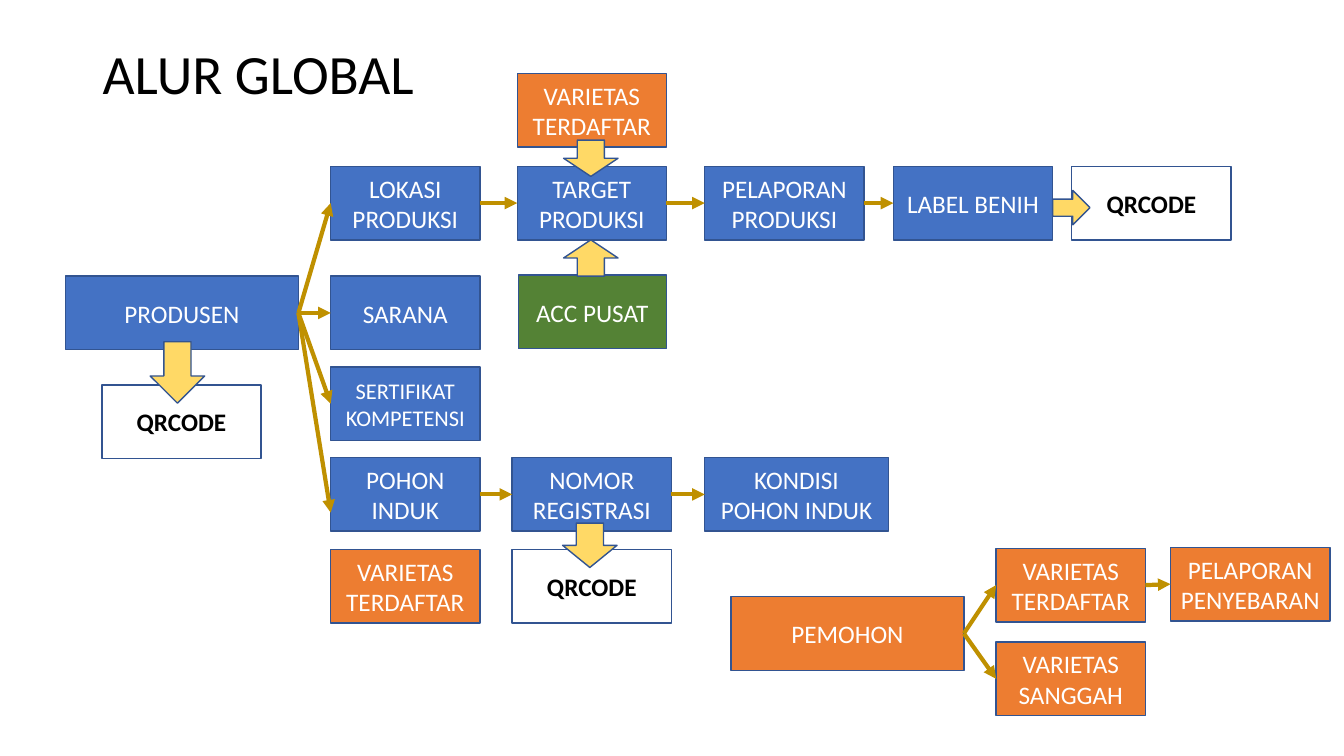
from lxml.etree import SubElement
from pptx import Presentation
from pptx.dml.color import RGBColor
from pptx.enum.shapes import MSO_CONNECTOR as Link, MSO_SHAPE as Form
from pptx.enum.text import MSO_ANCHOR as Anchor, PP_ALIGN as Align
from pptx.oxml.ns import qn
from pptx.util import Inches, Pt

BLUE = RGBColor(0x44, 0x72, 0xC4)
ORANGE = RGBColor(0xED, 0x7D, 0x31)
GREEN = RGBColor(0x54, 0x82, 0x35)
YELLOW = RGBColor(0xFF, 0xD9, 0x66)
GOLD = RGBColor(0xBF, 0x90, 0x00)
EDGE = RGBColor(0x32, 0x54, 0x91)
WHITE = RGBColor(0xFF, 0xFF, 0xFF)
BLACK = RGBColor(0, 0, 0)

HIGH = 0.73
THIN, MID, WIDE = 1.48, 1.58, 2.31
COL = 3.28
ROW = 1.65
LOW = 4.54


def write(frame, text, size=18, color=WHITE, bold=False, align=Align.CENTER, space=None):
    frame.word_wrap = True
    frame.vertical_anchor = Anchor.MIDDLE
    para = frame.paragraphs[0]
    para.alignment = align
    para.line_spacing = space
    run = para.add_run()
    run.text = text
    font = run.font
    font.name, font.size, font.bold = "Calibri", Pt(size), bold
    font.color.rgb = color


class Chart:
    """Flow chart on one slide, in one style."""

    def __init__(self, slide):
        self.shapes = slide.shapes

    def title(self, text, x, y, w, h):
        area = self.shapes.add_textbox(*map(Inches, (x, y, w, h)))
        write(area.text_frame, text, size=39.6, color=BLACK, align=Align.LEFT, space=0.9)

    def form(self, kind, fill, x, y, w, h):
        shape = self.shapes.add_shape(kind, *map(Inches, (x, y, w, h)))
        shape.shadow.inherit = False
        shape.fill.solid()
        shape.fill.fore_color.rgb = fill
        shape.line.color.rgb = EDGE
        shape.line.width = Pt(1)
        return shape

    def box(self, text, x, y, w=THIN, fill=BLUE, **style):
        shape = self.form(Form.RECTANGLE, fill, x, y, w, HIGH)
        write(shape.text_frame, text, **style)
        return shape

    def code(self, x, y):
        return self.box("QRCODE", x, y, MID, WHITE, color=BLACK, bold=True)

    def block(self, x, y, h, turn=180):
        """Draw a thick vertical arrow, pointing down unless turn is 0."""
        self.form(Form.UP_ARROW, YELLOW, x, y, 0.54, h).rotation = turn

    def link(self, start, end, drop=0):
        """Run from a right side to a left side; drop lowers the free end."""
        x, y = end.left, end.top + end.height // 2 + Inches(drop)
        line = self.shapes.add_connector(Link.STRAIGHT, x, y, x, y)
        line.begin_connect(start, 3)
        if not drop:
            line.end_connect(end, 1)
        line.line.color.rgb = GOLD
        line.line.width = Pt(3)
        SubElement(line.line._get_or_add_ln(), qn("a:tailEnd"), type="triangle")
        SubElement(line._element.spPr, qn("a:effectLst"))


def main():
    deck = Presentation()
    deck.slide_width, deck.slide_height = Inches(13.33), Inches(7.5)
    flow = Chart(deck.slides.add_slide(deck.slide_layouts[6]))
    flow.title("ALUR GLOBAL", 0.92, 0.4, 11.5, 0.72)

    maker = flow.box("PRODUSEN", 0.65, 2.74, WIDE)
    site = flow.box("LOKASI PRODUKSI", COL, ROW)
    tools = flow.box("SARANA", COL, 2.74)
    skill = flow.box("SERTIFIKAT KOMPETENSI", COL, 3.64, size=16)
    tree = flow.box("POHON INDUK", COL, LOW)
    goal = flow.box("TARGET PRODUKSI", 5.13, ROW)
    number = flow.box("NOMOR REGISTRASI", 5.08, LOW, MID)
    report = flow.box("PELAPORAN PRODUKSI", 6.99, ROW, MID)
    state = flow.box("KONDISI POHON INDUK", 6.99, LOW, 1.82)
    label = flow.box("LABEL BENIH", 8.86, ROW, MID)
    for x, y in (10.63, ROW), (1.01, 3.82), (5.08, 5.45):
        flow.code(x, y)
    flow.box("ACC PUSAT", 5.14, 2.73, 1.47, GREEN)

    asker = flow.box("PEMOHON", 7.25, 5.92, WIDE, ORANGE)
    listed, _, _ = [flow.box("VARIETAS TERDAFTAR", x, y, fill=ORANGE)
                    for x, y in ((9.88, 5.44), (COL, 5.45), (5.13, 0.73))]
    claim = flow.box("VARIETAS SANGGAH", 9.88, 6.37, fill=ORANGE)
    spread = flow.box("PELAPORAN PENYEBARAN", 11.61, 5.43, MID, ORANGE)

    for end in site, tools, skill:
        flow.link(maker, end)
    flow.link(maker, tree, drop=0.18)
    for chain in ((site, goal, report, label), (tree, number, state),
                  (asker, listed, spread), (asker, claim)):
        for start, end in zip(chain, chain[1:]):
            flow.link(start, end)

    flow.block(5.59, 2.38, 0.36, turn=0)
    for x, y, h in (5.59, 1.39, 0.36), (1.49, 3.39, 0.61), (5.58, 5.19, 0.44):
        flow.block(x, y, h)
    flow.form(Form.RIGHT_ARROW, YELLOW, 10.44, 1.89, 0.37, 0.34)
    deck.save("out.pptx")


if __name__ == "__main__":
    main()
